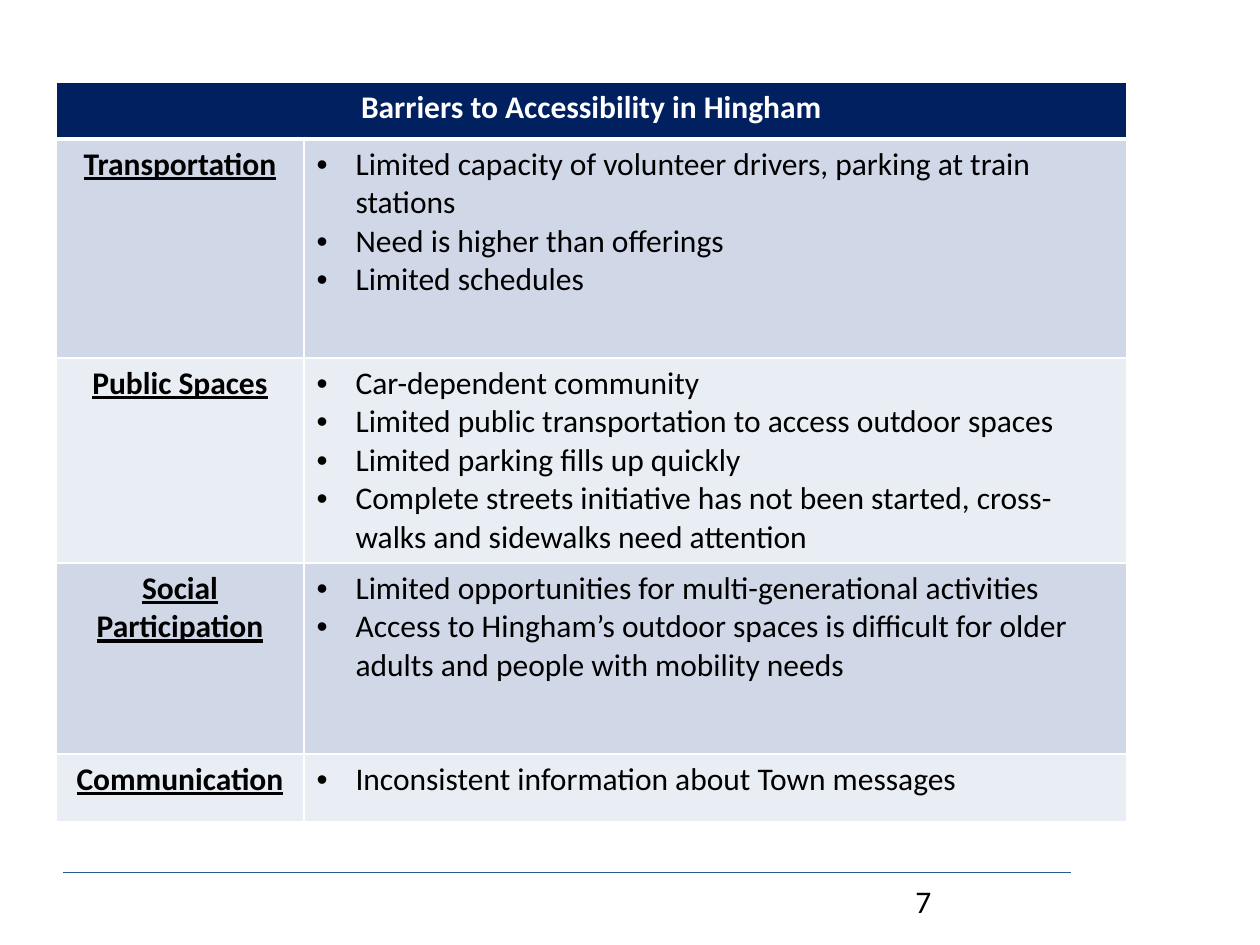
from lxml.etree import SubElement
from pptx import Presentation
from pptx.dml.color import RGBColor
from pptx.enum.shapes import MSO_CONNECTOR
from pptx.enum.text import PP_ALIGN
from pptx.oxml.ns import qn
from pptx.util import Emu, Pt

PX = 914400 / 126
NAVY = RGBColor(0x00, 0x20, 0x60)
RULE_BLUE = RGBColor(0x2D, 0x58, 0x8D)
BAND_DARK = RGBColor(0xD0, 0xD8, 0xE8)
BAND_LIGHT = RGBColor(0xE9, 0xED, 0xF4)
WHITE = RGBColor(0xFF, 0xFF, 0xFF)
BLACK = RGBColor(0x00, 0x00, 0x00)

TITLE = "Barriers to Accessibility in Hingham"
BARRIERS = [
    ("Transportation", [
        "Limited capacity of volunteer drivers, parking at train stations",
        "Need is higher than offerings",
        "Limited schedules",
    ]),
    ("Public Spaces", [
        "Car-dependent community",
        "Limited public transportation to access outdoor spaces",
        "Limited parking fills up quickly",
        "Complete streets initiative has not been started, cross-walks and sidewalks need attention",
    ]),
    ("Social Participation", [
        "Limited opportunities for multi-generational activities",
        "Access to Hingham’s outdoor spaces is difficult for older adults and people with mobility needs",
    ]),
    ("Communication", ["Inconsistent information about Town messages"]),
]
COLUMN_WIDTHS = [248, 823]
ROW_HEIGHTS = [57, 219, 205, 191, 68]


def px(*lengths):
    return [Emu(round(length * PX)) for length in lengths]


def write(frame, lines, color=BLACK, bold=False, underline=False,
          align=PP_ALIGN.LEFT, bullet=False):
    """Fill a text frame with one paragraph per line."""
    for index, line in enumerate(lines):
        paragraph = frame.add_paragraph() if index else frame.paragraphs[0]
        paragraph.alignment = align
        if bullet:
            properties = paragraph._p.get_or_add_pPr()
            indent = px(39)[0]
            properties.set("marL", str(indent))
            properties.set("indent", str(-indent))
            SubElement(properties, qn("a:buFont"), typeface="Arial")
            SubElement(properties, qn("a:buChar"), char="•")
        run = paragraph.add_run()
        run.text = line
        run.font.name = "Calibri"
        run.font.size = Pt(18)
        run.font.bold = bold
        run.font.underline = underline
        run.font.color.rgb = color


presentation = Presentation()
presentation.slide_width, presentation.slide_height = px(1260, 945)
slide = presentation.slides.add_slide(presentation.slide_layouts[6])

# Footer rule and page number
rule = slide.shapes.add_connector(MSO_CONNECTOR.STRAIGHT, *px(63, 872, 1071, 872))
rule.line.color.rgb = RULE_BLUE
rule.line.width = Pt(0.5)
SubElement(rule._element.spPr, qn("a:effectLst"))

page_number = slide.shapes.add_textbox(*px(903, 876, 294, 50))
page_number.text_frame.word_wrap = True
write(page_number.text_frame, ["7"])

# Table of barriers
table = slide.shapes.add_table(
    len(ROW_HEIGHTS), len(COLUMN_WIDTHS),
    *px(56, 82, sum(COLUMN_WIDTHS), sum(ROW_HEIGHTS))).table
for column, width in zip(table.columns, px(*COLUMN_WIDTHS)):
    column.width = width
for row, height in zip(table.rows, px(*ROW_HEIGHTS)):
    row.height = height

for row_index, row in enumerate(table.rows):
    band = BAND_DARK if row_index % 2 else BAND_LIGHT
    for cell in row.cells:
        cell_properties = cell._tc.get_or_add_tcPr()
        for side in "LRTB":
            heavy = (row_index, side) in [(0, "B"), (1, "T")]
            border = SubElement(cell_properties, qn(f"a:ln{side}"),
                                w=str(Pt(3 if heavy else 1)))
            fill = SubElement(border, qn("a:solidFill"))
            SubElement(fill, qn("a:srgbClr"), val=str(WHITE))
        cell.fill.solid()
        cell.fill.fore_color.rgb = band if row_index else NAVY

header = table.cell(0, 0)
header.merge(table.cell(0, 1))
write(header.text_frame, [TITLE], color=WHITE, bold=True, align=PP_ALIGN.CENTER)

for row_index, (topic, points) in enumerate(BARRIERS, start=1):
    write(table.cell(row_index, 0).text_frame, [topic],
          bold=True, underline=True, align=PP_ALIGN.CENTER)
    write(table.cell(row_index, 1).text_frame, points, bullet=True)

presentation.save("out.pptx")
